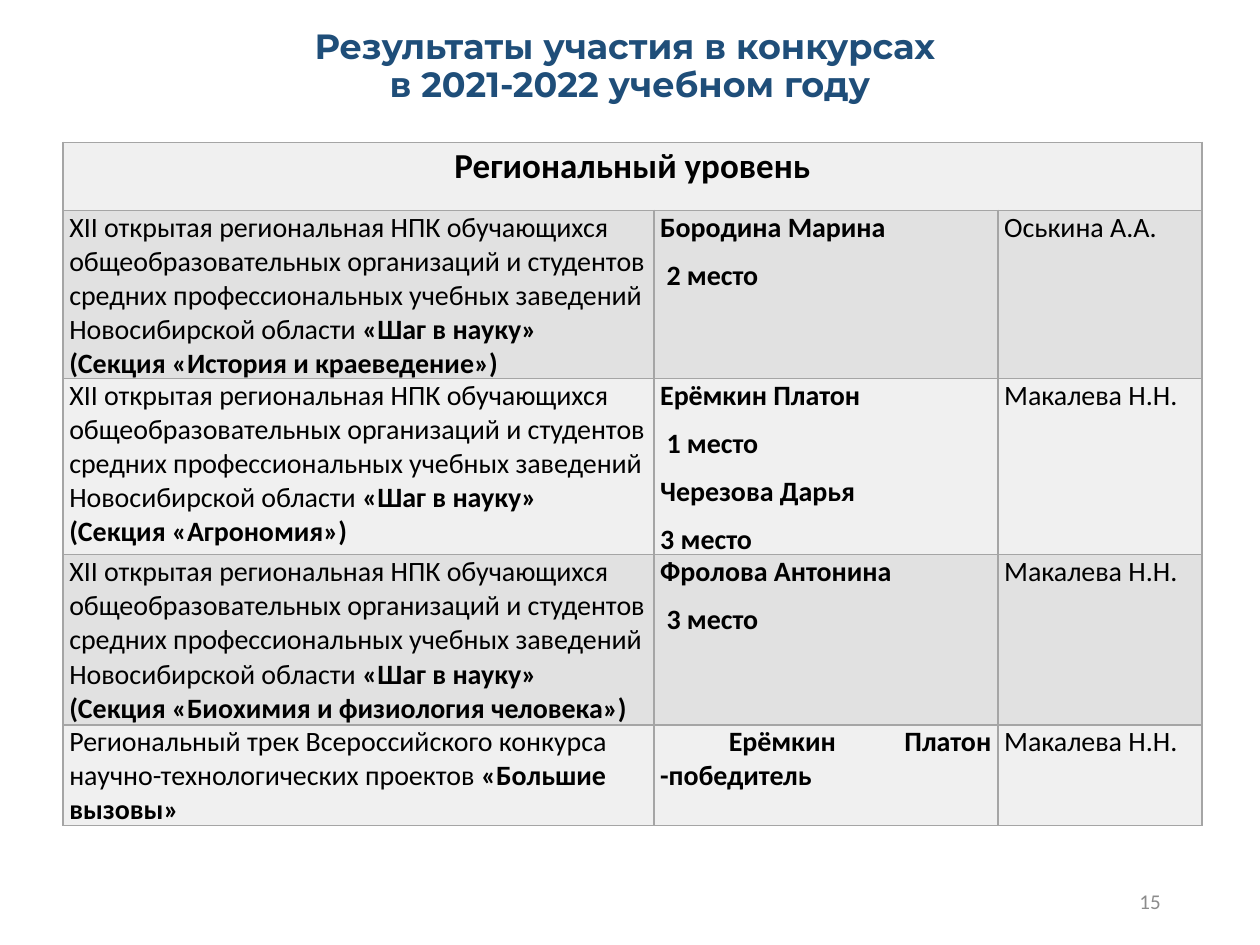
from lxml.etree import SubElement
from pptx import Presentation
from pptx.dml.color import RGBColor
from pptx.enum.text import MSO_ANCHOR, PP_ALIGN
from pptx.oxml.ns import qn
from pptx.util import Inches, Pt


def style_run(run, size, color, bold=False, font="Calibri"):
    run.font.size = Pt(size)
    run.font.name = font
    run.font.bold = bold
    run.font.color.rgb = RGBColor.from_string(color)


def style_cell(cell, fill):
    cell.margin_left = cell.margin_right = Inches(0.05)
    cell.margin_top = cell.margin_bottom = 0
    properties = cell._tc.get_or_add_tcPr()
    for side in ("lnL", "lnR", "lnT", "lnB"):
        line = SubElement(properties, qn(f"a:{side}"), w=str(Pt(1)))
        solid = SubElement(line, qn("a:solidFill"))
        SubElement(solid, qn("a:srgbClr"), val="A5A5A5")
    cell.fill.solid()
    cell.fill.fore_color.rgb = RGBColor.from_string(fill)


presentation = Presentation()
presentation.slide_width = Inches(10)
presentation.slide_height = Inches(7.5)
slide = presentation.slides.add_slide(presentation.slide_layouts[6])

labels = [
    (0.69, 0.24, 8.62, 0.59, "Результаты участия в конкурсах \vв 2021-2022 учебном году",
     PP_ALIGN.CENTER, 0.9, 20, "1F4E79", True, "Montserrat"),
    (7.06, 6.95, 2.25, 0.4, "15", PP_ALIGN.RIGHT, 1.0, 12, "8C8C8C", False, "Calibri"),
]
for left, top, width, height, text, alignment, spacing, size, color, bold, font in labels:
    shape = slide.shapes.add_textbox(Inches(left), Inches(top), Inches(width), Inches(height))
    shape.text_frame.word_wrap = True
    shape.text_frame.vertical_anchor = MSO_ANCHOR.MIDDLE
    paragraph = shape.text_frame.paragraphs[0]
    paragraph.text = text
    paragraph.alignment = alignment
    paragraph.line_spacing = spacing
    for run in paragraph.runs:
        style_run(run, size, color, bold, font)

conference = (
    "XII открытая региональная НПК обучающихся общеобразовательных организаций "
    "и студентов средних профессиональных учебных заведений Новосибирской области "
)
step = "«Шаг в науку»"
results = [
    (conference, step, "(Секция «История и краеведение»)",
     ["Бородина Марина", " 2 место"], "Оськина А.А."),
    (conference, step, "(Секция «Агрономия»)",
     ["Ерёмкин Платон", " 1 место", "Черезова Дарья", "3 место"], "Макалева Н.Н."),
    (conference, step, "(Секция «Биохимия и физиология человека»)",
     ["Фролова Антонина", " 3 место"], "Макалева Н.Н."),
    ("Региональный трек Всероссийского конкурса научно-технологических проектов ",
     "«Большие вызовы»", None, [" Ерёмкин Платон -победитель"], "Макалева Н.Н."),
]
column_widths = [4.69, 2.73, 1.62]
row_heights = [0.54, 1.2, 1.31, 1.35, 0.55]

table = slide.shapes.add_table(
    len(row_heights), len(column_widths), Inches(0.5), Inches(1.13),
    Inches(sum(column_widths)), Inches(sum(row_heights)),
).table
for column, width in zip(table.columns, column_widths):
    column.width = Inches(width)
for row, height in zip(table.rows, row_heights):
    row.height = Inches(height)
for row_index, row in enumerate(table.rows):
    for cell in row.cells:
        style_cell(cell, "E1E1E1" if row_index % 2 else "F0F0F0")

header = table.cell(0, 0)
header.merge(table.cell(0, 2))
paragraph = header.text_frame.paragraphs[0]
paragraph.text = "Региональный уровень"
paragraph.alignment = PP_ALIGN.CENTER
paragraph.line_spacing = 1.07
paragraph.space_after = Pt(8)
style_run(paragraph.runs[0], 20, "000000", True)

for row_index, (event, contest, section, winners, teacher) in enumerate(results, 1):
    contest_frame = table.cell(row_index, 0).text_frame
    paragraph = contest_frame.paragraphs[0]
    for text, bold in ((event, False), (contest, True)):
        run = paragraph.add_run()
        run.text = text
        style_run(run, 16, "000000", bold)
    if section:
        paragraph = contest_frame.add_paragraph()
        paragraph.text = section
        paragraph.alignment = PP_ALIGN.JUSTIFY
        paragraph.space_after = Pt(8)
        style_run(paragraph.runs[0], 16, "000000", True)
    for column_index, lines, bold in ((1, winners, True), (2, [teacher], False)):
        text_frame = table.cell(row_index, column_index).text_frame
        text_frame.text = "\n".join(lines)
        for paragraph in text_frame.paragraphs:
            paragraph.alignment = PP_ALIGN.JUSTIFY
            paragraph.space_after = Pt(8)
            style_run(paragraph.runs[0], 16, "000000", bold)

presentation.save("out.pptx")
